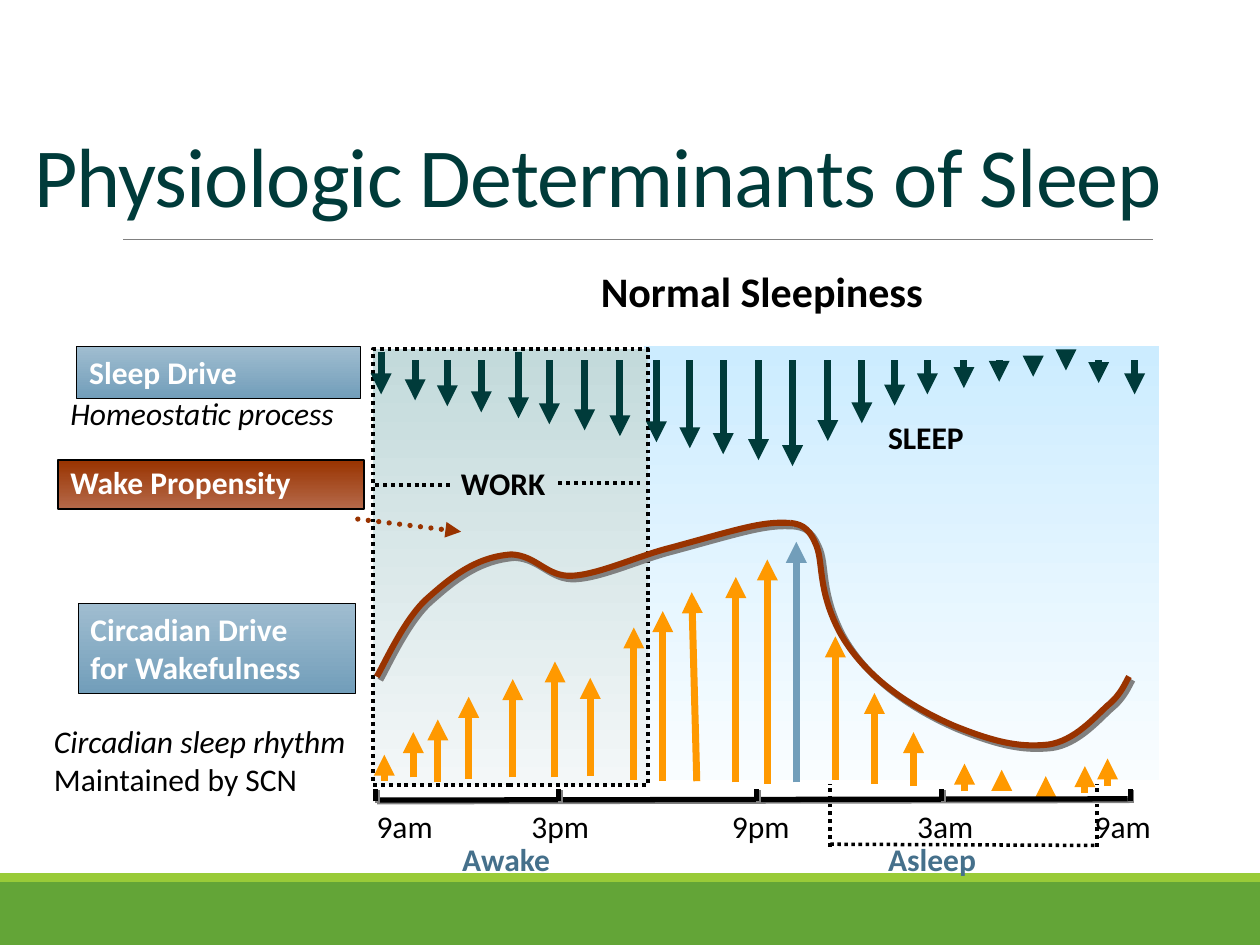
from typing import NamedTuple

from lxml.etree import SubElement
from pptx import Presentation
from pptx.dml.color import RGBColor
from pptx.enum.dml import MSO_LINE
from pptx.enum.shapes import MSO_CONNECTOR as Connector, MSO_SHAPE as Preset
from pptx.enum.text import MSO_ANCHOR as Anchor, MSO_AUTO_SIZE as AutoSize, PP_ALIGN as Align
from pptx.oxml.ns import qn
from pptx.util import Inches, Pt

COLUMNS, ROWS = 100, 75
FONT = "Calibri"
BLACK, WHITE, GRAY = "000000", "FFFFFF", "808080"
TEAL, ORANGE, BLUE, RUST, SLATE = "003B3A", "FF9900", "729EBA", "993300", "45708B"
BLUE_FADE = ("A0BDD0", BLUE)
RUST_FADE = (RUST, "B5694A")

presentation = Presentation()
presentation.slide_width, presentation.slide_height = Inches(10), Inches(7.5)
layout = presentation.slide_layouts[5]
slide = presentation.slides.add_slide(layout)


class Box(NamedTuple):
    column: float
    row: float
    columns: float
    rows: float


class Label(NamedTuple):
    box: Box
    lines: tuple[str, ...]
    size: float = 18
    color: str = BLACK
    bold: bool = False
    italic_lines: int = 0
    spacing: float = 1


class Panel(NamedTuple):
    box: Box
    fill: tuple[str, ...]
    border: float = 0
    dotted: bool = False
    lines: tuple[str, ...] = ()
    spacing: float = 1


class Line(NamedTuple):
    start: tuple[float, float]
    end: tuple[float, float]
    color: str = BLACK
    width: float = 2.25
    dotted: bool = False
    arrow: bool = False
    shadow: float = 0


def across(column: float) -> int:
    return round(presentation.slide_width * column / COLUMNS)


def down(row: float) -> int:
    return round(presentation.slide_height * row / ROWS)


def place(box: Box) -> tuple[int, int, int, int]:
    return across(box.column), down(box.row), across(box.columns), down(box.rows)


def rgb(color: str) -> RGBColor:
    return RGBColor.from_string(color)


def set_shadow(shape, distance: float = 0) -> None:
    effects = SubElement(shape._element.spPr, qn("a:effectLst"))
    if distance:
        outer = SubElement(effects, qn("a:outerShdw"), dist=str(Pt(distance)), dir="2700000",
                           algn="ctr", rotWithShape="0")
        SubElement(outer, qn("a:srgbClr"), val=GRAY)


def set_line(shape, color: str, width: float, dotted: bool = False) -> None:
    shape.line.color.rgb = rgb(color)
    shape.line.width = Pt(width)
    if dotted:
        shape.line.dash_style = MSO_LINE.ROUND_DOT


def write_lines(frame, label: Label) -> None:
    frame.word_wrap = True
    for index, text in enumerate(label.lines):
        paragraph = frame.add_paragraph() if index else frame.paragraphs[0]
        paragraph.alignment = Align.LEFT
        if label.spacing != 1:
            paragraph.line_spacing = label.spacing
        run = paragraph.add_run()
        run.text = text
        run.font.name, run.font.size = FONT, Pt(label.size)
        run.font.bold, run.font.italic = label.bold, index < label.italic_lines
        run.font.color.rgb = rgb(label.color)


def draw_label(label: Label):
    shape = slide.shapes.add_textbox(*place(label.box))
    write_lines(shape.text_frame, label)
    return shape


def draw_panel(panel: Panel):
    shape = slide.shapes.add_shape(Preset.RECTANGLE, *place(panel.box))
    if len(panel.fill) == 1:
        shape.fill.solid()
        shape.fill.fore_color.rgb = rgb(panel.fill[0])
    else:
        shape.fill.gradient()
        shape.fill.gradient_angle = 270
        for stop, color in zip(shape.fill.gradient_stops, panel.fill):
            stop.color.rgb = rgb(color)
    if panel.border:
        set_line(shape, BLACK, panel.border, panel.dotted)
    else:
        shape.line.fill.background()
    shape.shadow.inherit = False
    if panel.lines:
        shape.text_frame.vertical_anchor = Anchor.TOP
        write_lines(shape.text_frame,
                    Label(panel.box, panel.lines, color=WHITE, bold=True, spacing=panel.spacing))
    return shape


def draw_line(line: Line):
    (x1, y1), (x2, y2) = line.start, line.end
    connector = slide.shapes.add_connector(Connector.STRAIGHT, across(x1), down(y1), across(x2), down(y2))
    set_line(connector, line.color, line.width, line.dotted)
    if line.arrow:
        SubElement(connector.get_or_add_ln(), qn("a:tailEnd"), type="triangle")
    set_shadow(connector, line.shadow)
    return connector


def draw_curve(start: tuple[float, float], segments: list[tuple[float, ...]]) -> None:
    builder = slide.shapes.build_freeform(across(start[0]), down(start[1]))
    builder.add_line_segments([(across(s[4]), down(s[5])) for s in segments], close=False)
    shape = builder.convert_to_shape()
    for element, segment in zip(list(shape._element.iter(qn("a:lnTo"))), segments):
        element.tag, knot = qn("a:cubicBezTo"), element[0]
        for index in (0, 2):
            control = SubElement(element, qn("a:pt"), x=str(across(segment[index]) - shape.left),
                                 y=str(down(segment[index + 1]) - shape.top))
            knot.addprevious(control)
    shape.fill.background()
    set_line(shape, RUST, 3.5)
    set_shadow(shape, 2.8)


title_label = Label(Box(1.7, 10.4, 94.2, 7.9), ("Physiologic Determinants of Sleep",), 48, TEAL, spacing=0.85)
title = slide.shapes.title
title.left, title.top, title.width, title.height = place(title_label.box)
title.text_frame.auto_size = AutoSize.NONE
title.text_frame.vertical_anchor = Anchor.BOTTOM
write_lines(title.text_frame, title_label)
title.text_frame.paragraphs[0].runs[0].font._element.set("spc", "-50")

for decoration in (
    draw_panel(Panel(Box(0, 70, COLUMNS, 5), ("63A537",))),
    draw_panel(Panel(Box(0, 69.3, COLUMNS, 0.7), ("99CB38",))),
    draw_line(Line((9.8, 19), (91.5, 19), GRAY, 0.5)),
):
    layout.shapes._spTree.append(decoration._element)

draw_panel(Panel(Box(51.1, 27.5, 40.9, 34.4), ("CCECFF", "F9FDFF")))
draw_label(Label(Box(46.7, 20.6, 31.6, 5.1), ("Normal Sleepiness",), 24, bold=True))
draw_line(Line((65.9, 67), (87.1, 67.1), width=2, dotted=True))
for column in (65.9, 87.1):
    draw_line(Line((column, 67.2), (column, 62.2), dotted=True))
draw_label(Label(Box(35.7, 66.2, 15.6, 4.1), ("Awake",), color=SLATE, bold=True))
draw_panel(Panel(Box(29.6, 27.7, 21.8, 34.6), ("C3DADB", "F3F7F8"), 2.25, True))
draw_line(Line((29.8, 38.5), (35.9, 38.5), dotted=True))
draw_line(Line((44.3, 38.3), (51, 38.3), dotted=True))
draw_label(Label(Box(69.5, 32.7, 10, 4.1), ("SLEEP",), bold=True))

WAKE_ARROWS = [
    (30.5, 62, 59.9), (32.8, 61.7, 58.1), (34.75, 62.1, 57.1), (37.2, 61.8, 55.3), (40.7, 61.7, 53.9),
    (44.05, 61.7, 52.5), (46.85, 61.6, 53.8), (50.3, 61.9, 49.8), (52.6, 62, 48.5), (58.4, 62.1, 45.8),
    (60.9, 62.2, 44.4), (66.3, 61.9, 50.5), (69.4, 62.2, 55), (72.5, 62.4, 58.1), (76.55, 62.8, 60.6),
    (79.5, 62.6, 61.1), (83, 63.1, 61.6), (86.1, 62.9, 60.8), (87.9, 62.4, 60.2),
]
for column, base, tip in WAKE_ARROWS:
    draw_line(Line((column, base), (column, tip), ORANGE, 4, arrow=True))
draw_line(Line((55.3, 62), (54.9, 47), ORANGE, 4, arrow=True))
draw_line(Line((63.2, 62.1), (63.2, 43), BLUE, 4, arrow=True))
draw_panel(Panel(Box(6.2, 47.9, 22, 7.1), BLUE_FADE, 0.5, lines=("Circadian Drive", "for Wakefulness")))

SLEEP_COLUMNS = [30.25, 32.95, 35.5, 38.2, 41.15, 43.6, 46.4, 49.2, 52.1, 54.75, 57.4, 60.2,
                 62.9, 65.7, 68.4, 71, 73.6, 76.5, 79.3, 82, 84.6, 87.2, 90.05]
RISING_TIPS = [31.3 + 0.475 * index for index in range(13)]
FALLING_TIPS = [35, 33.6, 32.2, 31.3, 30.8, 30.3, 29.9, 29.4, 30.4, 31.3]
HIGH_STARTS = (0, 4)
for index, (column, tip) in enumerate(zip(SLEEP_COLUMNS, RISING_TIPS + FALLING_TIPS)):
    top = 27.9 if index in HIGH_STARTS else 28.6
    draw_line(Line((column, top), (column, tip), TEAL, 4, arrow=True))
draw_panel(Panel(Box(6.1, 27.5, 22.5, 4.1), BLUE_FADE, 0.5, lines=("Sleep Drive",)))

draw_curve((29.9, 53.7), [
    (30.5, 52.7, 32.1, 49.1, 33.9, 47.5), (35.7, 45.9, 37.7, 44.2, 40.6, 44),
    (42.6, 44.1, 43.4, 45.8, 45.4, 45.7), (47.5, 45.6, 50.7, 44.1, 53.1, 43.5),
    (55.7, 42.8, 58.4, 42, 60, 41.7), (61.6, 41.4, 62.2, 41.5, 62.7, 41.5),
])
draw_curve((62.7, 41.5), [
    (63.4, 41.6, 64.1, 41.7, 64.7, 43.1), (65.4, 44.5, 64.8, 46.6, 66.6, 50.1),
    (68.5, 53.6, 72, 56, 75.7, 57.6), (79.4, 59.1, 81.2, 59.3, 83.2, 59.1),
    (85.3, 58.8, 86.9, 56.9, 87.9, 56), (89, 55.1, 89.3, 54.2, 89.6, 53.7),
])
pointer = draw_line(Line((28.4, 41.2), (36.6, 42.2), RUST, 3, dotted=True, arrow=True))
pointer.get_or_add_ln().set("cap", "rnd")

draw_line(Line((29.8, 63.5), (89.5, 63.4), width=3, shadow=1.4))
for column in (29.8, 44.35, 60.05, 74.75, 89.7):
    draw_line(Line((column, 63.6), (column, 62.6), width=3, shadow=1.4))

draw_label(Label(Box(35.6, 36.3, 11, 4.1), ("WORK",), bold=True))
draw_panel(Panel(Box(4.6, 36.5, 24.3, 3.9), RUST_FADE, 1, lines=("Wake Propensity",), spacing=0.95))
draw_label(Label(Box(4.6, 30.8, 23.7, 4), ("Homeostatic process",), italic_lines=1))
draw_label(Label(Box(3.3, 56.8, 26.5, 7.1), ("Circadian sleep rhythm", "Maintained by SCN"), italic_lines=1))
draw_label(Label(Box(69.5, 66.2, 14.3, 4.1), ("Asleep",), color=SLATE, bold=True))

hours = draw_label(Label(Box(28.9, 63.6, 67, 4), ("9am\t3pm\t9pm\t3am\t9am",)))
tab_stops = SubElement(hours.text_frame.paragraphs[0]._p.get_or_add_pPr(), qn("a:tabLst"))
for column in (12.3, 28.2, 42.9, 57):
    SubElement(tab_stops, qn("a:tab"), pos=str(across(column)), algn="l")

presentation.save("out.pptx")
